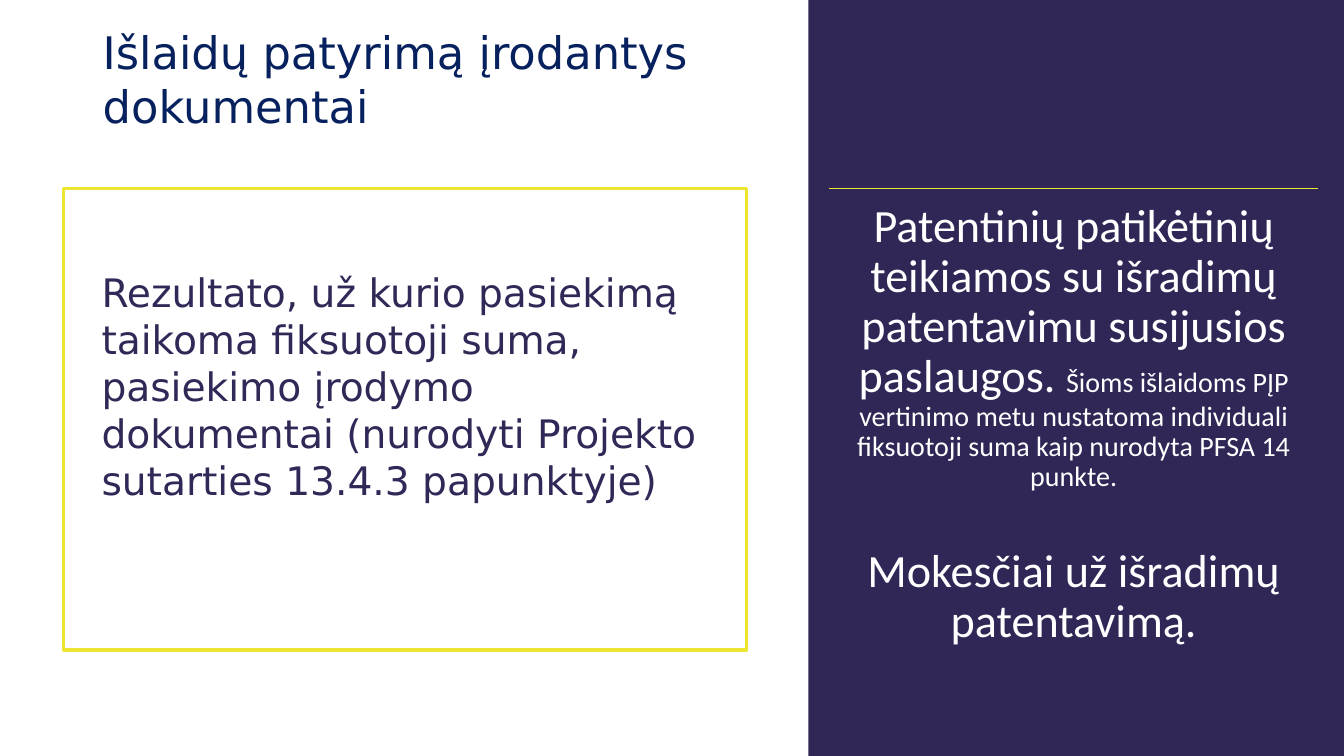
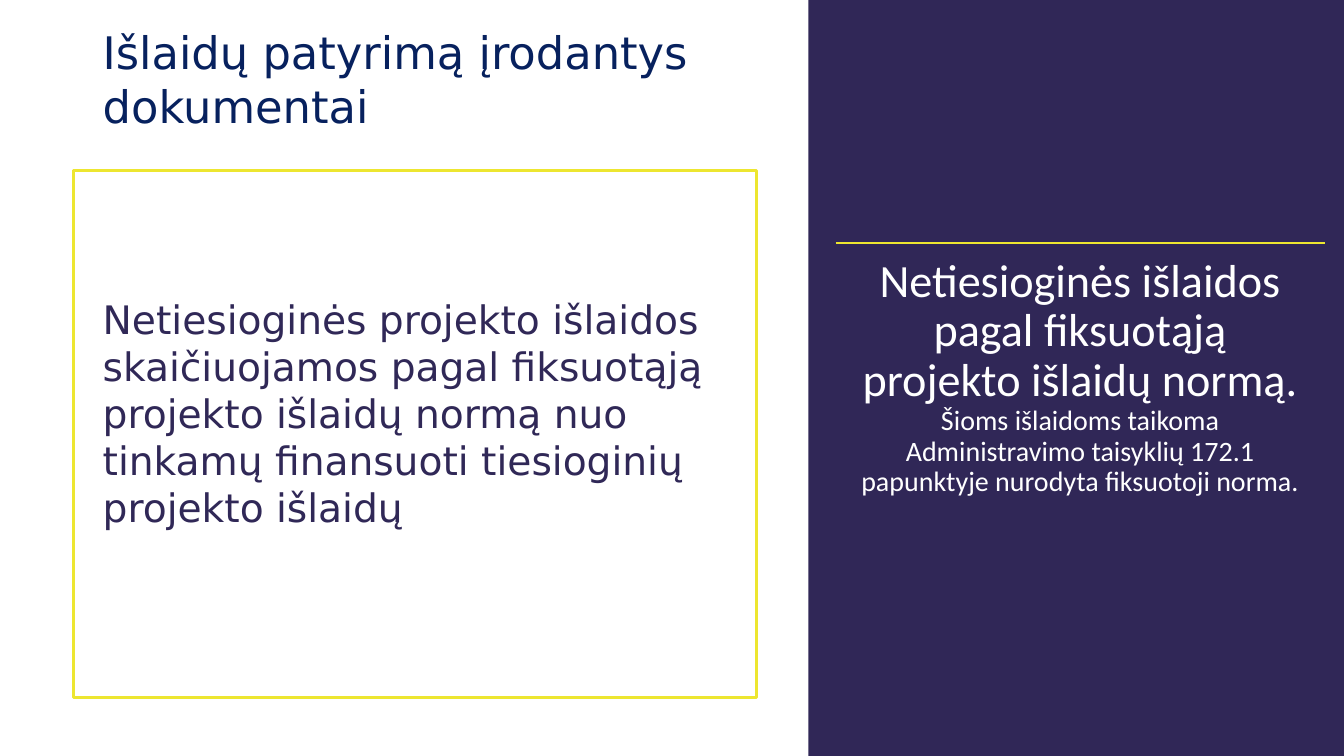
from dataclasses import dataclass

from lxml import etree
from pptx import Presentation
from pptx.dml.color import RGBColor
from pptx.enum.shapes import MSO_CONNECTOR, MSO_SHAPE
from pptx.enum.text import MSO_ANCHOR, PP_ALIGN
from pptx.oxml.ns import qn
from pptx.slide import Slide
from pptx.util import Cm, Pt

RECTANGLE = MSO_SHAPE.RECTANGLE
STRAIGHT = MSO_CONNECTOR.STRAIGHT
TOP = MSO_ANCHOR.TOP
LEFT, CENTER = PP_ALIGN.LEFT, PP_ALIGN.CENTER

# Shared style, lengths in centimetres
WHITE, PURPLE, NAVY = "FFFFFF", "302757", "07215E"
BODY_COLOR, YELLOW = "302857", "EDE630"
TITLE_FONT, PANEL_FONT = "DejaVu Sans", "Calibri"
SLIDE_WIDTH, SLIDE_HEIGHT = 33.87, 19.05
PANEL_LEFT = 20.37
RULE_WIDTH = 12.32
FRAME_WIDTH = 17.22
TITLE = "Išlaidų patyrimą įrodantys dokumentai"
LARGE, SMALL = 33, 20


@dataclass(frozen=True)
class Box:
    left: float
    top: float
    width: float
    height: float

    def lengths(self) -> tuple[Cm, Cm, Cm, Cm]:
        return Cm(self.left), Cm(self.top), Cm(self.width), Cm(self.height)


@dataclass(frozen=True)
class Run:
    text: str
    size: float


@dataclass(frozen=True)
class Content:
    frame: Box
    body: Box
    body_text: str
    rule_left: float
    rule_top: float
    panel_paragraphs: list[list[Run]]


CONTENTS = [
    Content(
        frame=Box(1.6, 4.75, FRAME_WIDTH, 11.63),
        body=Box(2.31, 6.63, 15.8, 7.44),
        body_text="Rezultato, už kurio pasiekimą taikoma fiksuotoji suma, pasiekimo "
                  "įrodymo dokumentai (nurodyti Projekto sutarties 13.4.3 papunktyje)",
        rule_left=20.9,
        rule_top=4.75,
        panel_paragraphs=[
            [Run("Patentinių patikėtinių teikiamos su išradimų patentavimu "
                 "susijusios paslaugos. ", LARGE),
             Run("Šioms išlaidoms PĮP vertinimo metu nustatoma individuali "
                 "fiksuotoji suma kaip nurodyta PFSA 14 punkte.", SMALL)],
            [Run("Mokesčiai už išradimų patentavimą.", LARGE)],
        ],
    ),
    Content(
        frame=Box(1.85, 4.29, FRAME_WIDTH, 13.28),
        body=Box(2.34, 7.32, 15.8, 7.44),
        body_text="Netiesioginės projekto išlaidos skaičiuojamos pagal fiksuotąją "
                  "projekto išlaidų normą nuo tinkamų finansuoti tiesioginių "
                  "projekto išlaidų",
        rule_left=21.06,
        rule_top=6.12,
        panel_paragraphs=[
            [Run("Netiesioginės išlaidos pagal fiksuotąją projekto išlaidų "
                 "normą. ", LARGE),
             Run("Šioms išlaidoms taikoma Administravimo taisyklių 172.1 "
                 "papunktyje nurodyta fiksuotoji norma.", SMALL)],
        ],
    ),
]


def color(value: str) -> RGBColor:
    return RGBColor.from_string(value)


def add_rectangle(slide: Slide, box: Box, fill: str | None = None,
                  outline: str | None = None, width: float = 2.25) -> None:
    shape = slide.shapes.add_shape(RECTANGLE, *box.lengths())
    shape.shadow.inherit = False
    if fill:
        shape.fill.solid()
        shape.fill.fore_color.rgb = color(fill)
    else:
        shape.fill.background()
    if outline:
        shape.line.color.rgb = color(outline)
        shape.line.width = Pt(width)
    else:
        shape.line.fill.background()


def add_rule(slide: Slide, left: float, top: float) -> None:
    rule = slide.shapes.add_connector(
        STRAIGHT, Cm(left), Cm(top), Cm(left + RULE_WIDTH), Cm(top))
    rule.line.color.rgb = color(YELLOW)
    rule.line.width = Pt(1)
    etree.SubElement(rule._element.spPr, qn("a:effectLst"))


def add_text(slide: Slide, box: Box, paragraphs: list[list[Run]], *, font: str,
             fill: str, align: PP_ALIGN = LEFT, line_spacing: float = 1.0,
             gap: float = 0, inset: float | None = None) -> None:
    frame = slide.shapes.add_textbox(*box.lengths()).text_frame
    frame.word_wrap = True
    frame.vertical_anchor = TOP
    if inset is not None:
        frame.margin_left = frame.margin_right = Cm(inset)
        frame.margin_top = frame.margin_bottom = Cm(inset)
    for index, runs in enumerate(paragraphs):
        paragraph = frame.add_paragraph() if index else frame.paragraphs[0]
        paragraph.alignment = align
        paragraph.line_spacing = line_spacing
        if index:
            paragraph.space_before = Pt(gap)
        for item in runs:
            run = paragraph.add_run()
            run.text = item.text
            run.font.name = font
            run.font.size = Pt(item.size)
            run.font.color.rgb = color(fill)


def add_base(slide: Slide) -> None:
    """Draw the side panel and title found on every slide."""
    add_rectangle(slide, Box(PANEL_LEFT, 0, SLIDE_WIDTH - PANEL_LEFT, SLIDE_HEIGHT),
                  fill=PURPLE)
    add_text(slide, Box(2.34, 0.51, FRAME_WIDTH, 3), [[Run(TITLE, 32)]],
             font=TITLE_FONT, fill=NAVY)


def add_content(slide: Slide, content: Content) -> None:
    # Framed statement on the left
    add_rectangle(slide, content.frame, outline=YELLOW)
    add_text(slide, content.body, [[Run(content.body_text, 28)]],
             font=TITLE_FONT, fill=BODY_COLOR)
    # Rule and expense category in the side panel
    add_rule(slide, content.rule_left, content.rule_top)
    add_text(slide, Box(content.rule_left, content.rule_top, RULE_WIDTH, 12.01),
             content.panel_paragraphs, font=PANEL_FONT, fill=WHITE, align=CENTER,
             line_spacing=0.9, gap=39, inset=0.36)


def main() -> None:
    presentation = Presentation()
    presentation.slide_width = Cm(SLIDE_WIDTH)
    presentation.slide_height = Cm(SLIDE_HEIGHT)
    blank_layout = presentation.slide_layouts[6]
    for content in CONTENTS:
        slide = presentation.slides.add_slide(blank_layout)
        add_base(slide)
        add_content(slide, content)
    presentation.save("out.pptx")


if __name__ == "__main__":
    main()
